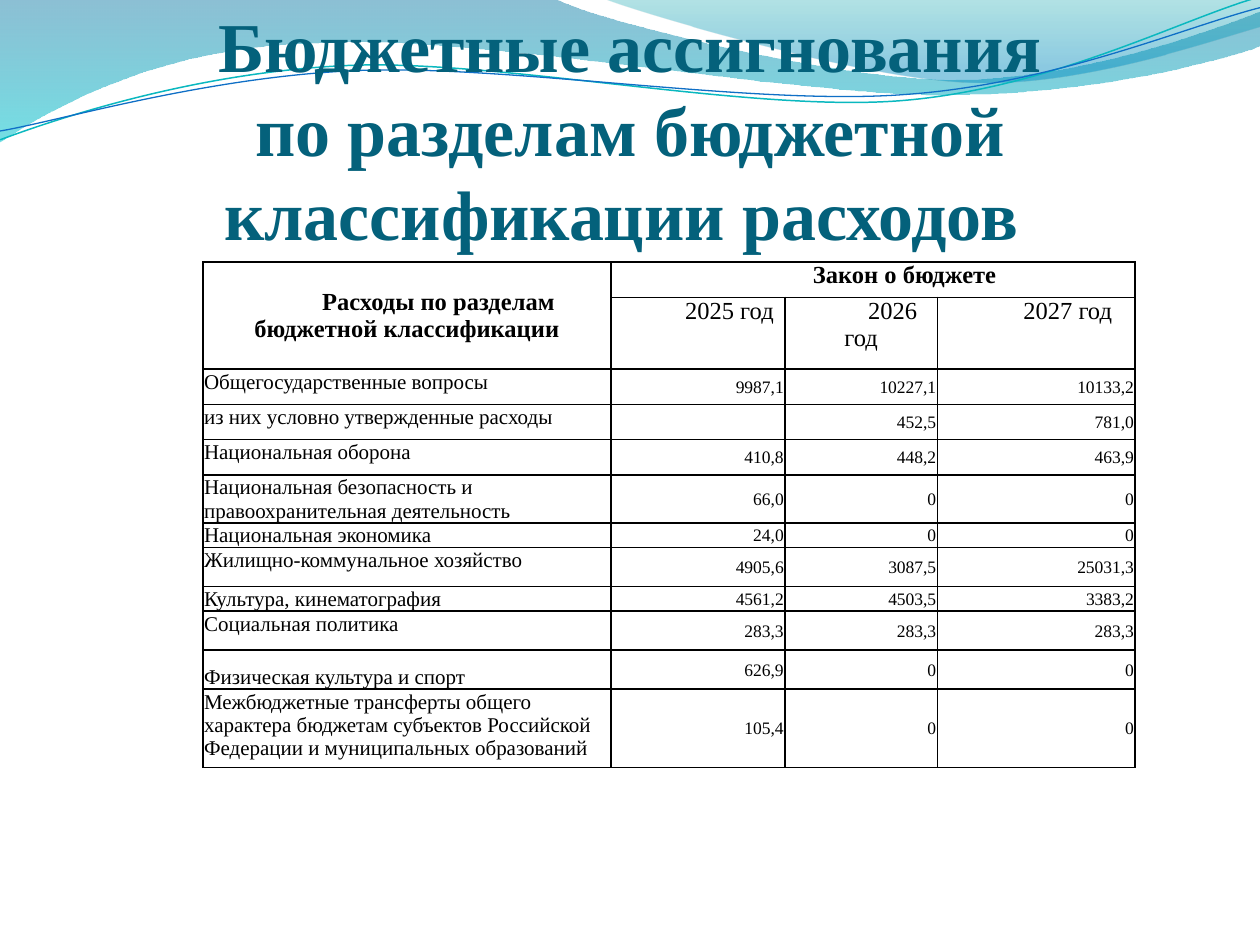
import math

from lxml import etree
from pptx import Presentation
from pptx.dml.color import RGBColor
from pptx.enum import text
from pptx.oxml import ns
from pptx.util import Inches, Pt

FONT = "Times New Roman"
UNITS = 1000
COLORS = {
    "title": "04617B", "ink": "000000",
    "teal_line": "0AB8BF", "blue_line": "0F6FC6",
    "deep_blue": "0074A1", "aqua": "00C6CF",
    "teal": "00A1A9", "sky": "008BBF",
}
TITLE = "Бюджетные ассигнования\vпо разделам бюджетной классификации расходов "
COLUMN_WIDTHS = [3.24, 1.38, 1.21, 1.57]
HEADER_HEIGHTS = [0.28, 0.57]
YEARS = ["2025 год", "2026 год", "2027 год"]
EXPENSES = [
    (0.28, "Общегосударственные вопросы", "9987,1", "10227,1", "10133,2"),
    (0.28, "из них условно утвержденные расходы", "", "452,5", "781,0"),
    (0.28, "Национальная оборона", "410,8", "448,2", "463,9"),
    (0.38, "Национальная безопасность и правоохранительная деятельность",
     "66,0", "0", "0"),
    (0.19, "Национальная экономика", "24,0", "0", "0"),
    (0.31, "Жилищно-коммунальное хозяйство", "4905,6", "3087,5", "25031,3"),
    (0.19, "Культура, кинематография", "4561,2", "4503,5", "3383,2"),
    (0.31, "Социальная политика", "283,3", "283,3", "283,3"),
    (0.31, "Физическая культура и спорт", "626,9", "0", "0"),
    (0.62, "Межбюджетные трансферты общего характера бюджетам субъектов "
     "Российской Федерации и муниципальных образований", "105,4", "0", "0"),
]
BOTTOM_ROW = "Физическая культура и спорт"
BANDS = [
    ([(0, 0), (4.4, -0.01),
      (4.76, 0.17, 6.64, 0.63, 7.58, 0.63), (8.53, 0.63, 9.58, 0.26, 10, 0.09),
      (10.01, 0.36),
      (9.83, 0.44, 8.7, 0.76, 7.46, 0.75), (6.22, 0.75, 3.82, 0.28, 2.57, 0.34),
      (1.29, 0.36, 0.46, 0.83, -0.01, 1.13)],
     [(0, "deep_blue", 45), (1, "aqua", 55)]),
    ([(4.79, -0.01),
      (5.09, 0.11, 6.82, 0.62, 7.69, 0.65), (8.56, 0.69, 9.61, 0.32, 10, 0.21),
      (10, 0)],
     [(0, "teal", 30), (0.8, "sky", 45)]),
]
WAVES = [
    ([(0, 1.11), (0.48, 0.93, 1.58, 0.57, 2.77, 0.52),
      (3.95, 0.47, 5.93, 0.89, 7.13, 0.8), (8.33, 0.71, 9.38, 0.15, 9.98, -0.02)],
     "teal_line", 0.85),
    ([(0, 1.04), (0.47, 0.96, 1.64, 0.61, 2.83, 0.56),
      (4.03, 0.51, 5.97, 0.84, 7.17, 0.75), (8.36, 0.67, 9.41, 0.21, 10, 0.06)],
     "blue_line", 0.75),
]
WAVE_CENTER = (4.99, 0.58)
WAVE_TILT = -2.7


def color(name):
    return RGBColor.from_string(COLORS[name])


def pairs(segment):
    return list(zip(segment[::2], segment[1::2]))


def level(segment):
    angle = math.radians(-WAVE_TILT)
    result = []
    for x, y in pairs(segment):
        dx, dy = x - WAVE_CENTER[0], y - WAVE_CENTER[1]
        result += [WAVE_CENTER[0] + dx * math.cos(angle) - dy * math.sin(angle),
                   WAVE_CENTER[1] + dx * math.sin(angle) + dy * math.cos(angle)]
    return tuple(result)


def add_curve(slide, segments, close):
    scaled = [[(round(x * UNITS), round(y * UNITS)) for x, y in pairs(segment)]
              for segment in segments]
    anchors = [points[-1] for points in scaled]
    builder = slide.shapes.build_freeform(*anchors[0], scale=Inches(1) / UNITS)
    builder.add_line_segments(anchors[1:], close=close)
    shape = builder.convert_to_shape()
    shape.shadow.inherit = False
    left, top = (min(values) for values in zip(*anchors))
    lines = list(shape._element.iter(ns.qn("a:lnTo")))
    for line, points in zip(lines, scaled[1:]):
        if len(points) == 3:
            curve = etree.Element(ns.qn("a:cubicBezTo"))
            for x, y in points:
                etree.SubElement(curve, ns.qn("a:pt"), x=str(x - left), y=str(y - top))
            line.getparent().replace(line, curve)
    return shape


def add_band(slide, segments, stops):
    shape = add_curve(slide, segments, True)
    shape.line.fill.background()
    shape.fill.gradient()
    shape.fill.gradient_angle = 270
    for stop, (position, name, _) in zip(shape.fill.gradient_stops, stops):
        stop.position = position
        stop.color.rgb = color(name)
    values = shape._element.spPr.iter(ns.qn("a:srgbClr"))
    for value, (_, _, opacity) in zip(values, stops):
        etree.SubElement(value, ns.qn("a:alpha"), val=str(opacity * 1000))


def add_wave(slide, segments, name, width):
    shape = add_curve(slide, [level(segment) for segment in segments], False)
    shape.rotation = WAVE_TILT
    shape.fill.background()
    shape.line.color.rgb = color(name)
    shape.line.width = Pt(width)


def format_runs(paragraph, size, name, bold):
    for run in paragraph.runs:
        run.font.name = FONT
        run.font.size = Pt(size)
        run.font.bold = bold
        run.font.color.rgb = color(name)


def set_title(slide):
    title = slide.shapes.title
    title.left, title.top = Inches(0.5), Inches(0.77)
    title.width, title.height = Inches(9), Inches(1.25)
    frame = title.text_frame
    frame.text = TITLE
    frame.word_wrap = True
    frame.auto_size = text.MSO_AUTO_SIZE.NONE
    frame.vertical_anchor = text.MSO_ANCHOR.BOTTOM
    frame.margin_left = frame.margin_right = frame.margin_bottom = 0
    frame.margin_top = Inches(0.05)
    frame.paragraphs[0].alignment = text.PP_ALIGN.CENTER
    format_runs(frame.paragraphs[0], 40, "title", True)
    slide.shapes._spTree.append(title._element)


def set_borders(cell):
    properties = cell._tc.get_or_add_tcPr()
    for position, side in enumerate(["lnL", "lnR", "lnT", "lnB"]):
        line = etree.Element(ns.qn(f"a:{side}"), w=str(Pt(1)))
        fill = etree.SubElement(line, ns.qn("a:solidFill"))
        etree.SubElement(fill, ns.qn("a:srgbClr"), val=COLORS["ink"])
        properties.insert(position, line)


def fill_cell(cell, content, size, alignment, anchor, bold=False):
    cell.text_frame.text = content
    cell.vertical_anchor = anchor
    paragraph = cell.text_frame.paragraphs[0]
    paragraph.alignment = alignment
    format_runs(paragraph, size, "ink", bold)
    if not content:
        etree.SubElement(paragraph._p, ns.qn("a:endParaRPr"), sz=str(size * 100))
    cell.margin_left = cell.margin_right = cell.margin_top = Inches(0.01)
    cell.margin_bottom = 0


def fill_header(cell, content, anchor=text.MSO_ANCHOR.TOP, bold=False):
    fill_cell(cell, content, 14, text.PP_ALIGN.CENTER, anchor, bold)
    cell.margin_left = cell.margin_right = Inches(0.07)
    cell.margin_top = 0
    properties = cell.text_frame.paragraphs[0]._p.get_or_add_pPr()
    properties.set("marL", "0")
    properties.set("indent", str(Inches(0.5)))


def add_budget_table(slide):
    heights = HEADER_HEIGHTS + [expense[0] for expense in EXPENSES]
    table = slide.shapes.add_table(
        len(heights), len(COLUMN_WIDTHS), Inches(1.61), Inches(2.08),
        Inches(sum(COLUMN_WIDTHS)), Inches(sum(heights))).table
    table.first_row = table.horz_banding = False
    for column, width in zip(table.columns, COLUMN_WIDTHS):
        column.width = Inches(width)
    for row, height in zip(table.rows, heights):
        row.height = Inches(height)
    for cell in table.iter_cells():
        cell.fill.background()
        set_borders(cell)
    table.cell(0, 0).merge(table.cell(1, 0))
    table.cell(0, 1).merge(table.cell(0, 3))
    fill_header(table.cell(0, 0), "Расходы по разделам бюджетной классификации",
                text.MSO_ANCHOR.MIDDLE, True)
    fill_header(table.cell(0, 1), "Закон о бюджете", bold=True)
    for column, year in enumerate(YEARS, 1):
        fill_header(table.cell(1, column), year)
    for row, (_, section, *amounts) in enumerate(EXPENSES, len(HEADER_HEIGHTS)):
        anchor = text.MSO_ANCHOR.BOTTOM if section == BOTTOM_ROW else text.MSO_ANCHOR.TOP
        fill_cell(table.cell(row, 0), section, 12, text.PP_ALIGN.LEFT, anchor)
        for column, amount in enumerate(amounts, 1):
            fill_cell(table.cell(row, column), amount, 10,
                      text.PP_ALIGN.RIGHT, text.MSO_ANCHOR.MIDDLE)


def main():
    presentation = Presentation()
    presentation.slide_width, presentation.slide_height = Inches(10), Inches(7.5)
    slide = presentation.slides.add_slide(presentation.slide_layouts[5])
    for band in BANDS:
        add_band(slide, *band)
    for wave in WAVES:
        add_wave(slide, *wave)
    set_title(slide)
    add_budget_table(slide)
    presentation.save("out.pptx")


if __name__ == "__main__":
    main()
